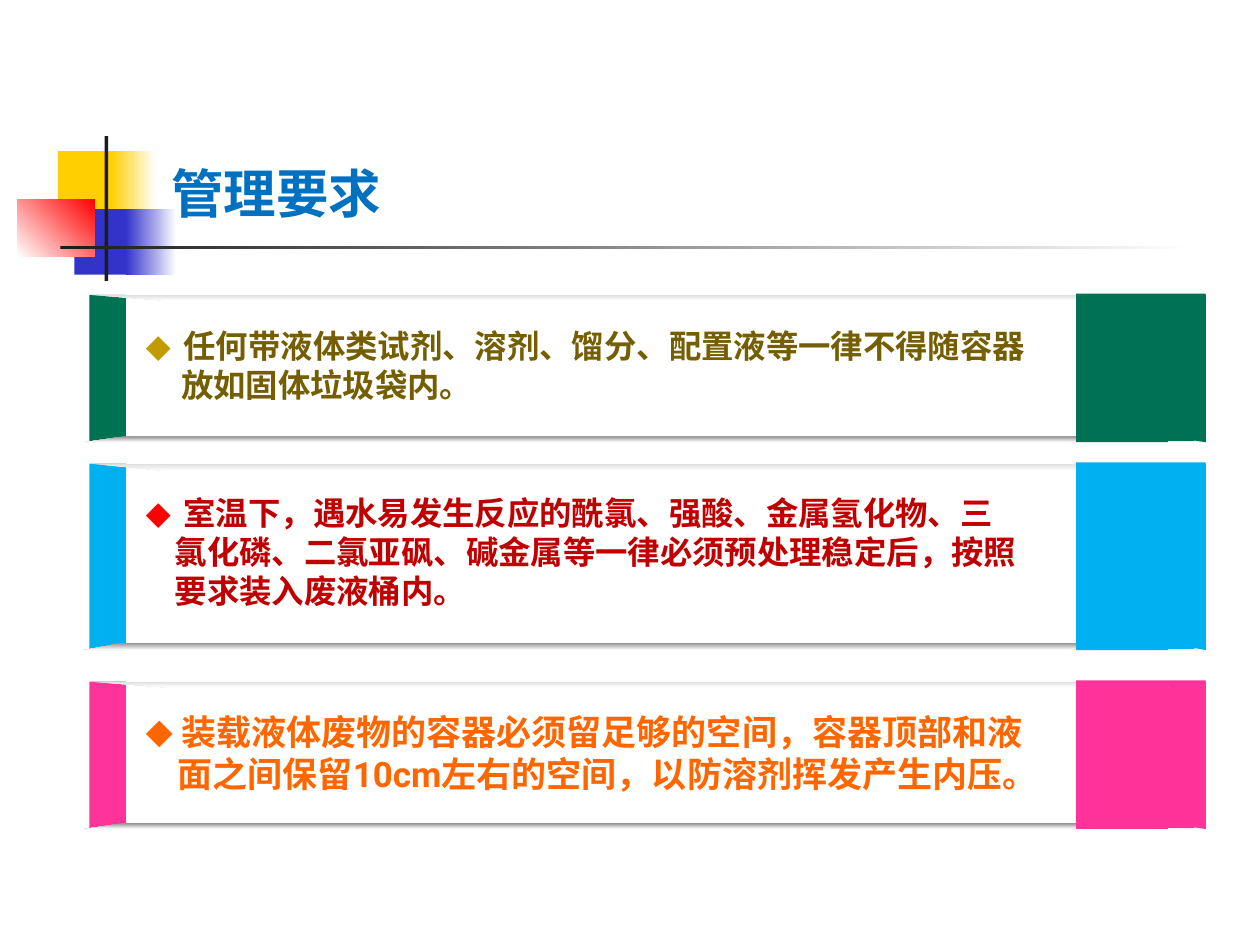
from lxml.etree import SubElement
from pptx import Presentation
from pptx.dml.color import RGBColor
from pptx.enum.shapes import MSO_SHAPE
from pptx.enum.text import MSO_ANCHOR, MSO_AUTO_SIZE, PP_ALIGN
from pptx.oxml.ns import qn
from pptx.util import Inches, Pt

FONT = "Roboto"
HUES = {
    "white": "FFFFFF", "ink": "1C1C1C", "title": "0070C0",
    "gold": "FFCF01", "navy": "3333CC", "red": "FF0000",
    "pale": "DDDDDD", "grey": "8E8E8E",
    "green": "007254", "sky": "00B0F0", "pink": "FF3399",
    "olive": "745E00", "ochre": "C09C00", "wine": "C00000", "flame": "FF6600",
}
LEFT, EDGE, FLAP, FOLD, RIGHT = 0.67, 0.71, 8.54, 9.27, 9.57
LOGO = [
    (0.46, 1.2, 0.48, 0.52, ["gold"], 0),
    (0.88, 1.2, 0.36, 0.52, ["gold", "white"], 0),
    (0.59, 1.66, 0.46, 0.52, ["navy"], 0),
    (1, 1.66, 0.4, 0.52, ["navy", "white"], 0),
    (0.14, 1.58, 0.61, 0.46, ["white", "red"], 45),
    (0.83, 1.08, 0.03, 1.15, ["ink"], 0),
    (0.48, 1.95, 9, 0.03, ["ink", "white"], 0),
]
PANELS = [
    (2.34, 1.17, "green", "olive", "ochre", 18.5, (0.3, 0.28),
     ["任何带液体类试剂、溶剂、馏分、配置液等一律不得随容器",
      "放如固体垃圾袋内。"]),
    (3.68, 1.48, "sky", "wine", "red", 18.5, (0.3, 0.23),
     ["室温下，遇水易发生反应的酰氯、强酸、金属氢化物、三",
      "氯化磷、二氯亚砜、碱金属等一律必须预处理稳定后，按照",
      "要求装入废液桶内。"]),
    (5.41, 1.17, "pink", "flame", "flame", 20, (0.28, 0.25),
     ["装载液体废物的容器必须留足够的空间，容器顶部和液",
      "面之间保留10cm左右的空间，以防溶剂挥发产生内压。"]),
]


def tint(name):
    return RGBColor.from_string(HUES[name])


def paint(shape, hues, angle=0):
    shape.shadow.inherit = False
    shape.line.fill.background()
    if len(hues) == 1:
        shape.fill.solid()
        shape.fill.fore_color.rgb = tint(hues[0])
        return
    shape.fill.gradient()
    shape.fill.gradient_angle = angle
    for stop, hue in zip(shape.fill.gradient_stops, hues):
        stop.color.rgb = tint(hue)


def block(shapes, x, y, w, h, hues, angle=0):
    box = shapes.add_shape(MSO_SHAPE.RECTANGLE, *map(Inches, (x, y, w, h)))
    paint(box, hues, angle)


def outline(shapes, points, hues, angle=0):
    first, *rest = [(Inches(x), Inches(y)) for x, y in points]
    path = shapes.build_freeform(*first)
    path.add_line_segments(rest, close=True)
    paint(path.convert_to_shape(), hues, angle)


def style(para, size, hue):
    font = para.font
    font.name, font.size, font.bold = FONT, Pt(size), True
    font.color.rgb = tint(hue)
    props = para._p.pPr.find(qn("a:defRPr"))
    props.find(qn("a:latin")).addnext(props.makeelement(qn("a:ea"), {"typeface": FONT}))


def indent(para, left, bullet=None):
    props = para._p.get_or_add_pPr()
    props.set("marL", str(Inches(left)))
    props.set("indent", str(-Inches(left) if bullet else 0))
    if bullet:
        color = SubElement(props, qn("a:buClr"))
        SubElement(color, qn("a:srgbClr"), val=HUES[bullet])
        SubElement(props, qn("a:buFont"), typeface=FONT)
        SubElement(props, qn("a:buChar"), char="◆")
    else:
        SubElement(props, qn("a:buNone"))


def banner(slide, y, h, hue):
    """Draw a white ribbon with a coloured edge and a folded end flap."""
    shapes = slide.shapes.add_group_shape().shapes
    end, fold, lip = y + h, h * 0.04, h * 0.05
    block(shapes, LEFT, y, 8.75, h - 0.02, ["white"])
    block(shapes, EDGE, y, 0.29, h, [hue])
    outline(shapes, [(0.72, y), (1.33, y + fold), (8.91, y + fold), (9.52, y)],
            ["pale", "white"], 270)
    outline(shapes, [(LEFT, end), (0.98, end - fold), (9.25, end - fold), (RIGHT, end)],
            ["grey", "white"], 270)
    block(shapes, FLAP, y, FOLD - FLAP, h, [hue])
    block(shapes, FLAP, y - 0.01, RIGHT - FLAP, lip, [hue])
    block(shapes, FLAP, end - 0.01 - lip, 0.94, lip, [hue])
    outline(shapes, [(RIGHT, end), (FOLD, end - fold), (FOLD, y + fold), (RIGHT, y)], [hue])


def note(slide, y, h, hue, bullet, size, lefts, lines):
    box = slide.shapes.add_textbox(Inches(1.06), Inches(y), Inches(7.56), Inches(h))
    frame = box.text_frame
    frame.word_wrap = True
    frame.vertical_anchor = MSO_ANCHOR.MIDDLE
    for row, line in enumerate(lines):
        para = frame.add_paragraph() if row else frame.paragraphs[0]
        para.text = line
        para.line_spacing = Pt(size * 1.2)
        indent(para, lefts[min(row, 1)], None if row else bullet)
        style(para, size, hue)


def heading(slide, text):
    title = slide.shapes.title
    title.left, title.top, title.width, title.height = map(Inches, (1.26, 1.23, 8.52, 0.6))
    frame = title.text_frame
    frame.text = text
    frame.auto_size = MSO_AUTO_SIZE.NONE
    frame.vertical_anchor = MSO_ANCHOR.BOTTOM
    para = frame.paragraphs[0]
    para.alignment = PP_ALIGN.LEFT
    style(para, 30, "title")


def main():
    deck = Presentation()
    deck.slide_width, deck.slide_height = Inches(10), Inches(7.5)
    slide = deck.slides.add_slide(deck.slide_layouts[5])
    for part in LOGO:
        block(slide.shapes, *part)
    heading(slide, "管理要求")
    for y, h, hue, *words in PANELS:
        banner(slide, y, h, hue)
        note(slide, y, h - 0.05 if h < 1.4 else h - 0.08, *words)
    deck.save("out.pptx")


if __name__ == "__main__":
    main()
